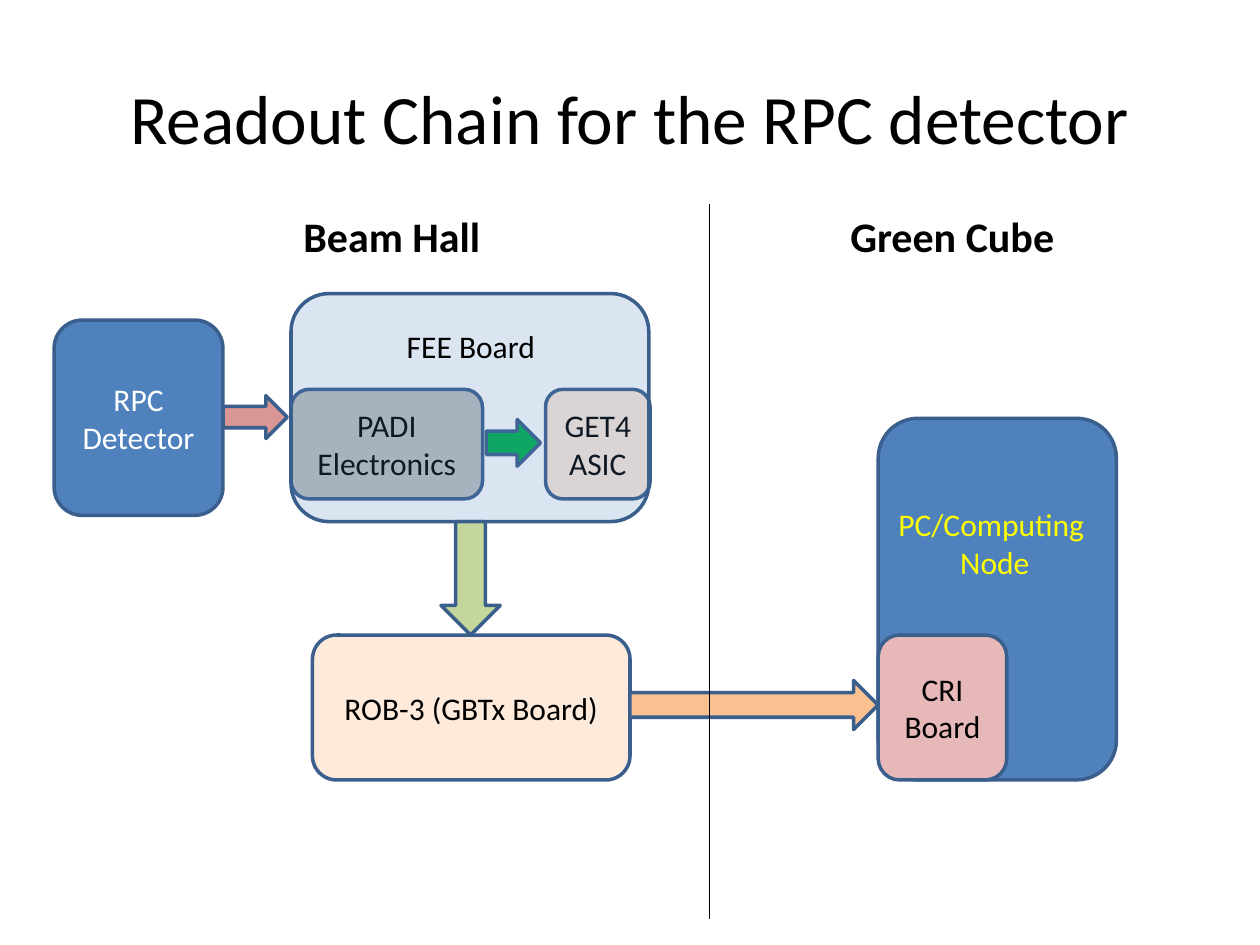
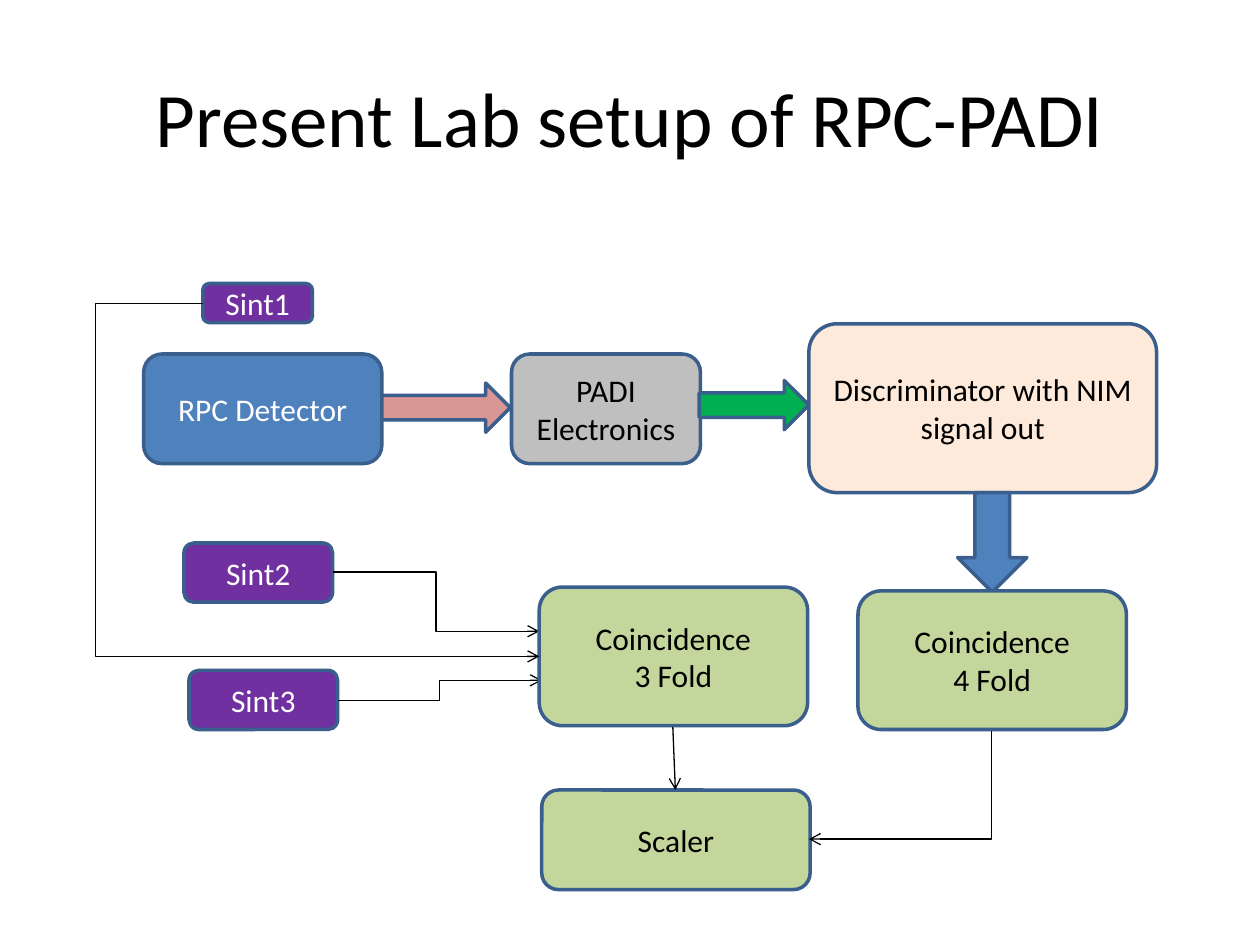
"""Build two block diagrams of the RPC detector readout."""
from dataclasses import dataclass
from typing import Optional

from lxml.etree import SubElement
from pptx import Presentation
from pptx.dml.color import RGBColor
from pptx.enum.shapes import MSO_CONNECTOR as Connector, MSO_SHAPE as Preset
from pptx.enum.text import MSO_ANCHOR as Anchor, PP_ALIGN as Align
from pptx.oxml.ns import qn
from pptx.slide import Slide
from pptx.text.text import TextFrame
from pptx.util import Inches, Pt

FONT = "Calibri"
BLACK = RGBColor(0x00, 0x00, 0x00)
WHITE = RGBColor(0xFF, 0xFF, 0xFF)
YELLOW = RGBColor(0xFF, 0xFF, 0x00)
BLUE = RGBColor(0x4F, 0x81, 0xBD)
OUTLINE = RGBColor(0x3A, 0x5F, 0x8C)
ROSE = RGBColor(0xD9, 0x96, 0x94)
PINK = RGBColor(0xE6, 0xB9, 0xB8)
GRAY = RGBColor(0xBF, 0xBF, 0xBF)
GREEN = RGBColor(0x00, 0xB0, 0x50)
LIGHT_GREEN = RGBColor(0xC3, 0xD6, 0x9B)
CREAM = RGBColor(0xFD, 0xEA, 0xDA)
ORANGE = RGBColor(0xFA, 0xC0, 0x90)
PURPLE = RGBColor(0x70, 0x30, 0xA0)


@dataclass(frozen=True)
class Block:
    """A filled shape with optional centred text."""

    left: float
    top: float
    width: float
    height: float
    fill: RGBColor
    text: str = ""
    color: RGBColor = BLACK
    preset: Preset = Preset.ROUNDED_RECTANGLE
    opacity: int = 100


@dataclass(frozen=True)
class Label:
    """Free text without a frame."""

    left: float
    top: float
    width: float
    height: float
    text: str
    size: float = 18
    color: RGBColor = BLACK
    bold: bool = False
    align: Align = Align.LEFT
    anchor: Anchor = Anchor.TOP
    wrap: bool = False


@dataclass(frozen=True)
class Link:
    """A thin line between two points, bent at a fraction of its width."""

    start: tuple[float, float]
    end: tuple[float, float]
    bend: Optional[float] = None
    corner: bool = False
    arrow: bool = True


def write_text(frame: TextFrame, text: str, *, size: float = 18,
               color: RGBColor = BLACK, bold: bool = False,
               align: Align = Align.CENTER, anchor: Anchor = Anchor.MIDDLE,
               wrap: bool = True) -> None:
    """Fill a text frame, one paragraph for each line of text."""
    frame.word_wrap = wrap
    frame.vertical_anchor = anchor
    frame.text = text
    for paragraph in frame.paragraphs:
        paragraph.alignment = align
        for run in paragraph.runs:
            run.font.name = FONT
            run.font.size = Pt(size)
            run.font.bold = bold
            run.font.color.rgb = color


def draw_block(slide: Slide, block: Block) -> None:
    """Draw a filled block with the shared outline."""
    shape = slide.shapes.add_shape(
        block.preset, Inches(block.left), Inches(block.top),
        Inches(block.width), Inches(block.height))
    shape.shadow.inherit = False
    shape.fill.solid()
    shape.fill.fore_color.rgb = block.fill
    shape.line.color.rgb = OUTLINE
    shape.line.width = Pt(2)
    if block.opacity < 100:
        color = shape.element.spPr.find(qn("a:solidFill")).find(qn("a:srgbClr"))
        SubElement(color, qn("a:alpha"), val=str(block.opacity * 1000))
    if block.text:
        write_text(shape.text_frame, block.text, color=block.color)


def draw_label(slide: Slide, label: Label) -> None:
    """Draw a text box."""
    box = slide.shapes.add_textbox(Inches(label.left), Inches(label.top),
                                   Inches(label.width), Inches(label.height))
    write_text(box.text_frame, label.text, size=label.size, color=label.color,
               bold=label.bold, align=label.align, anchor=label.anchor,
               wrap=label.wrap)


def draw_link(slide: Slide, link: Link) -> None:
    """Draw a straight, stepped or single-corner connector."""
    (x1, y1), (x2, y2) = link.start, link.end
    bent = link.corner or link.bend is not None
    if link.corner:
        middle_x, middle_y = (x1 + x2) / 2, (y1 + y2) / 2
        half_width, half_height = abs(y2 - y1) / 2, abs(x2 - x1) / 2
        x1, x2 = middle_x - half_width, middle_x + half_width
        y1, y2 = middle_y - half_height, middle_y + half_height
    connector = slide.shapes.add_connector(
        Connector.ELBOW if bent else Connector.STRAIGHT,
        Inches(x1), Inches(y1), Inches(x2), Inches(y2))
    connector.line.color.rgb = BLACK
    connector.line.width = Pt(0.75)
    properties = connector.element.spPr
    geometry = properties.find(qn("a:prstGeom"))
    if link.corner:
        connector.rotation = 90
        geometry.set("prst", "bentConnector2")
    elif bent:
        SubElement(geometry.find(qn("a:avLst")), qn("a:gd"), name="adj1",
                   fmla=f"val {round(link.bend * 100000)}")
    if link.arrow:
        SubElement(properties.find(qn("a:ln")), qn("a:tailEnd"), type="arrow")
    SubElement(properties, qn("a:effectLst"))


DRAW = {Block: draw_block, Label: draw_label, Link: draw_link}


def add_diagram(presentation: Presentation, title: str, title_size: float,
                items: list[Block | Label | Link]) -> None:
    """Add a titled slide and draw its items from back to front."""
    slide = presentation.slides.add_slide(presentation.slide_layouts[6])
    draw_label(slide, Label(0.5, 0.3, 9, 1.25, title, title_size, wrap=True,
                            align=Align.CENTER, anchor=Anchor.MIDDLE))
    for item in items:
        DRAW[type(item)](slide, item)


READOUT_CHAIN = [
    Block(6.97, 3.32, 1.89, 2.87, BLUE),
    Block(0.43, 2.54, 1.34, 1.55, BLUE, "RPC Detector", WHITE),
    Block(1.77, 3.14, 0.51, 0.34, ROSE, preset=Preset.RIGHT_ARROW),
    Block(2.31, 3.09, 1.52, 0.87, GRAY, "PADI Electronics"),
    Block(3.86, 3.33, 0.43, 0.37, GREEN, preset=Preset.RIGHT_ARROW),
    Block(4.33, 3.09, 0.83, 0.87, CREAM, "GET4 ASIC"),
    Block(2.31, 2.33, 2.84, 1.81, BLUE, opacity=20),
    Label(3.13, 2.55, 1.23, 0.4, "FEE Board"),
    Block(3.5, 4.14, 0.47, 0.9, LIGHT_GREEN, preset=Preset.DOWN_ARROW),
    Block(2.48, 5.04, 2.52, 1.15, CREAM, "ROB-3 (GBTx Board)"),
    Block(5, 5.4, 1.97, 0.39, ORANGE, preset=Preset.RIGHT_ARROW),
    Link((5.63, 1.62), (5.63, 7.29), arrow=False),
    Label(2.31, 1.62, 1.62, 0.5, "Beam Hall", 24, bold=True),
    Label(6.65, 1.62, 1.84, 0.5, "Green Cube", 24, bold=True),
    Block(6.97, 5.04, 1.02, 1.15, PINK, "CRI Board"),
    Label(7.02, 3.96, 1.75, 0.71, "PC/Computing \nNode", color=YELLOW,
          align=Align.CENTER),
]

LAB_SETUP = [
    Block(1.14, 2.81, 1.89, 0.87, BLUE, "RPC Detector", WHITE),
    Block(4.06, 2.81, 1.5, 0.87, GRAY, "PADI Electronics"),
    Block(3.03, 3.04, 1.02, 0.39, ROSE, preset=Preset.RIGHT_ARROW),
    Block(5.55, 3.02, 0.87, 0.39, GREEN, preset=Preset.RIGHT_ARROW),
    Block(6.42, 2.57, 2.76, 1.34, CREAM, "Discriminator with NIM signal out"),
    Block(7.6, 3.91, 0.55, 0.79, BLUE, preset=Preset.DOWN_ARROW),
    Block(6.81, 4.69, 2.13, 1.1, LIGHT_GREEN, "Coincidence\n4 Fold"),
    Block(1.61, 2.25, 0.87, 0.31, PURPLE, "Sint1", WHITE),
    Block(1.46, 4.31, 1.18, 0.47, PURPLE, "Sint2", WHITE),
    Block(1.5, 5.32, 1.18, 0.47, PURPLE, "Sint3", WHITE),
    Link((2.64, 4.54), (4.28, 5.01), bend=0.5),
    Block(4.3, 6.27, 2.13, 0.79, LIGHT_GREEN, "Scaler"),
    Link((7.87, 5.8), (6.42, 6.66), corner=True),
    Link((2.68, 5.56), (4.3, 5.4), bend=0.5),
    Block(4.28, 4.66, 2.13, 1.1, LIGHT_GREEN, "Coincidence\n3 Fold"),
    Link((5.34, 5.77), (5.36, 6.27)),
    Link((1.61, 2.41), (4.28, 5.21), bend=-0.32),
]


def main() -> None:
    """Build and save the presentation."""
    presentation = Presentation()
    presentation.slide_width = Inches(10)
    presentation.slide_height = Inches(7.5)
    add_diagram(presentation, "Readout Chain for the RPC detector", 39.6,
                READOUT_CHAIN)
    add_diagram(presentation, "Present Lab setup of RPC-PADI", 44, LAB_SETUP)
    presentation.save("out.pptx")


if __name__ == "__main__":
    main()
